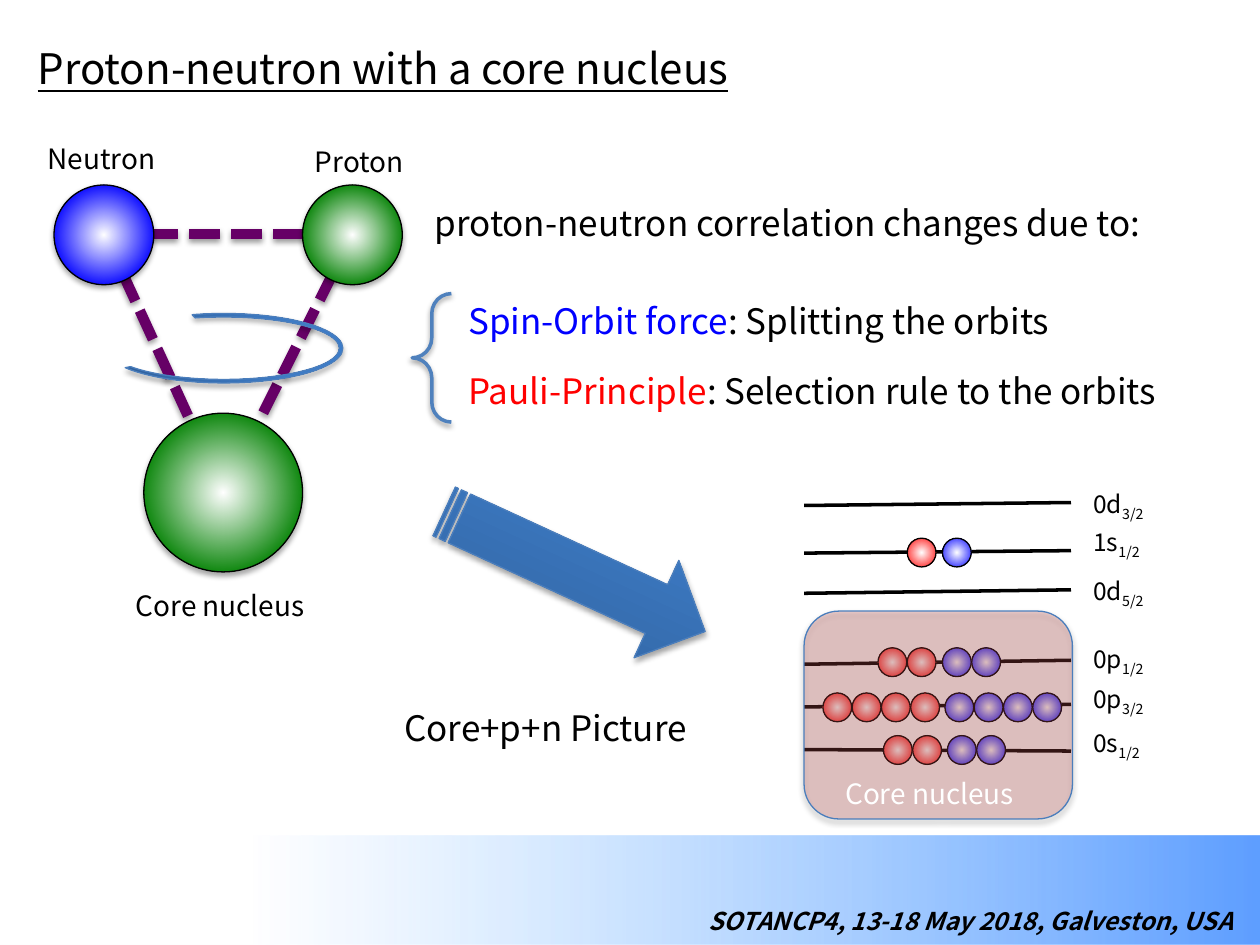
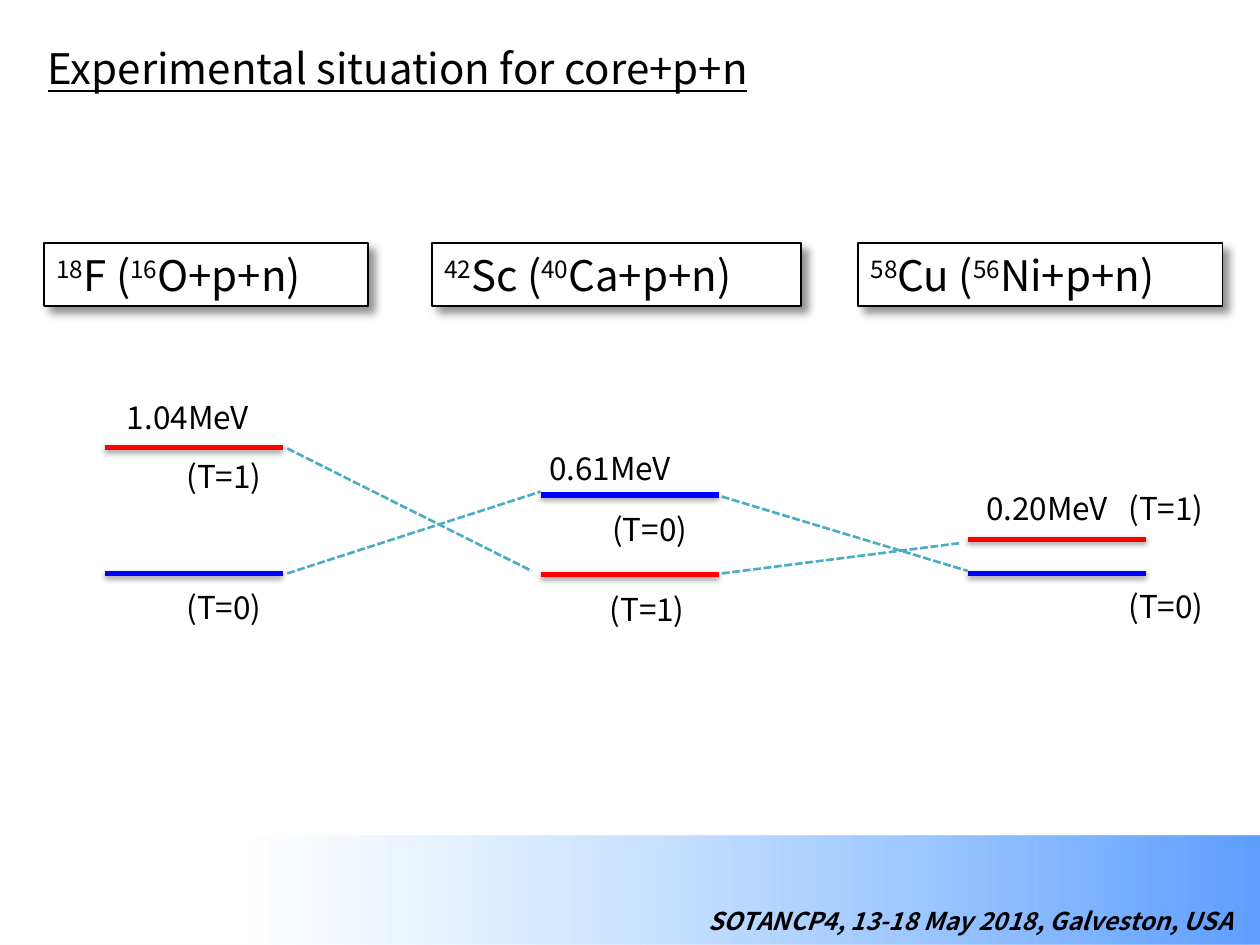
"""Build two slides on proton-neutron pairs around a core nucleus."""
from dataclasses import dataclass

from lxml.etree import SubElement
from pptx import Presentation
from pptx.dml.color import RGBColor
from pptx.enum.dml import MSO_LINE
from pptx.enum.shapes import MSO_CONNECTOR, MSO_SHAPE
from pptx.enum.text import MSO_AUTO_SIZE, PP_ALIGN
from pptx.oxml.ns import qn
from pptx.util import Cm, Pt


@dataclass(frozen=True)
class Theme:
    font: str = "Noto Sans CJK JP"
    black: str = "000000"
    white: str = "FFFFFF"
    red: str = "FF0000"
    blue: str = "0000FF"
    green: str = "008000"
    purple: str = "660066"
    teal: str = "4BACC6"
    edge: str = "4B7EBC"
    brace: str = "4F81BD"
    core: str = "C0504D"
    steel: tuple = ((0, "2F5F99"), (80, "3D7CC7"), (100, "3A7CCB"))
    band: tuple = ((0, "5E9EFF"), (80, "85C2FF", 0), (100, "85C2FF", 0))
    title: int = 24
    body: int = 20
    energy: int = 18
    label: int = 16
    small: int = 14


THEME = Theme()
LINE_SHADOW = dict(opacity=38, blur=3.15, distance=1.57, angle=90)
SHAPE_SHADOW = dict(opacity=35, blur=3.15, distance=1.81, angle=90)
CARD_SHADOW = dict(opacity=43, blur=5, distance=5, angle=45)

FOOTER = "SOTANCP4, 13-18 May 2018, Galveston, USA"

BONDS = [(2.11, 4.72, 7.29, 4.72), (2.11, 4.72, 4.5, 9.93), (7.11, 4.72, 4.5, 9.93)]
NUCLEI = [
    (1.09, 3.73, 2.01, THEME.blue),
    (6.1, 3.73, 2.01, THEME.green),
    (2.9, 8.33, 3.2, THEME.green),
]
NUCLEUS_LABELS = [
    ("Neutron", 0.71, 2.72, 2.77, THEME.black),
    ("Proton", 6.1, 2.79, 2.34, THEME.black),
    ("Core nucleus", 2.49, 11.73, 4.09, THEME.black),
    ("Core nucleus", 16.79, 15.52, 4.09, THEME.white),
]
STATEMENTS = [
    ("proton-neutron correlation changes due to:", 8.51, 3.94, 15.62),
    ([("Spin-Orbit force", {"color": THEME.blue}), (": Splitting the orbits", {})],
     9.19, 5.92, 12.98),
    ([("Pauli-Principle", {"color": THEME.red}), (": Selection rule to the orbits", {})],
     9.19, 7.32, 15.11),
    ("Core+p+n Picture", 7.9, 14.12, 6.76),
]

ORBIT_LEFT, ORBIT_RIGHT, ORBIT_LABEL_LEFT = 16.21, 21.59, 21.79
BALL_SIZE, BALL_PITCH = 0.58, 0.59
ORBITS = [
    dict(name="0s", spin="1/2", ends=(15.11, 15.14), label=14.55,
         balls=14.83, count=2, starts=(17.81, 19.1)),
    dict(name="0p", spin="3/2", ends=(14.25, 14.2), label=13.67,
         balls=13.97, count=4, starts=(16.59, 19.05)),
    dict(name="0p", spin="1/2", ends=(13.39, 13.31), label=12.85,
         balls=13.06, count=2, starts=(17.7, 19)),
    dict(name="0d", spin="5/2", ends=(11.96, 11.89), label=11.48, count=0),
    dict(name="1s", spin="1/2", ends=(11.15, 11.1), label=10.49,
         balls=10.85, count=1, starts=(18.29, 19)),
    dict(name="0d", spin="3/2", ends=(10.19, 10.13), label=9.73, count=0),
]

ISOTOPES = [
    ("18", "F (", "16", "O+p+n)", 0.89, 6.53),
    ("42", "Sc (", "40", "Ca+p+n)", 8.71, 7.44),
    ("58", "Cu (", "56", "Ni+p+n)", 17.3, 7.34),
]
LEVEL_LENGTH = 3.59
LEVEL_COLORS = {"(T=0)": THEME.blue, "(T=1)": THEME.red}
LEVELS = [
    ("(T=0)", 2.11, 11.56, 3.51, 11.73),
    ("(T=1)", 2.11, 9.02, 3.51, 9.09),
    ("(T=1)", 10.9, 11.58, 12.04, 11.76),
    ("(T=0)", 10.9, 9.98, 12.09, 10.16),
    ("(T=0)", 19.51, 11.56, 22.5, 11.71),
    ("(T=1)", 19.51, 10.87, 22.5, 9.73),
]
ENERGIES = [("1.04MeV", 2.31, 7.9), ("0.61MeV", 10.82, 8.92), ("0.20MeV", 19.63, 9.73)]
CORRELATIONS = [
    (5.79, 11.56, 10.9, 9.91), (5.79, 9.04, 10.72, 11.51),
    (14.55, 11.56, 19.35, 10.95), (14.55, 10.01, 19.51, 11.51),
]


def rgb(color):
    return RGBColor.from_string(color)


def set_shadow(item, shadow=None):
    effects = SubElement(item._element.spPr, qn("a:effectLst"))
    if shadow:
        outer = SubElement(
            effects, qn("a:outerShdw"), blurRad=str(Pt(shadow["blur"])),
            dist=str(Pt(shadow["distance"])), dir=str(shadow["angle"] * 60000),
            rotWithShape="0")
        color = SubElement(outer, qn("a:srgbClr"), val=THEME.black)
        SubElement(color, qn("a:alpha"), val=str(shadow["opacity"] * 1000))


def set_gradient(shape, stops, angle=None):
    properties = shape._element.spPr
    gradient = SubElement(properties, qn("a:gradFill"), rotWithShape="1")
    stop_list = SubElement(gradient, qn("a:gsLst"))
    for position, color, *opacity in stops:
        stop = SubElement(stop_list, qn("a:gs"), pos=str(position * 1000))
        paint = SubElement(stop, qn("a:srgbClr"), val=color)
        for value in opacity:
            SubElement(paint, qn("a:alpha"), val=str(value * 1000))
    if angle is None:
        radial = SubElement(gradient, qn("a:path"), path="circle")
        SubElement(radial, qn("a:fillToRect"), l="50000", t="50000", r="50000", b="50000")
    else:
        SubElement(gradient, qn("a:lin"), ang=str(angle * 60000), scaled="0")
    properties.find(qn("a:prstGeom")).addnext(gradient)


def add_figure(slide, kind, left, top, width, height, *, fill=None, stops=None, angle=None,
               opacity=None, edge=None, weight=0.75, shadow=None, rotation=0, adjust=()):
    shape = slide.shapes.add_shape(kind, Cm(left), Cm(top), Cm(width), Cm(height))
    shape.rotation = rotation
    for index, value in enumerate(adjust):
        shape.adjustments[index] = value
    if stops:
        set_gradient(shape, stops, angle)
    elif fill:
        shape.fill.solid()
        shape.fill.fore_color.rgb = rgb(fill)
        if opacity:
            paint = shape._element.spPr.find(qn("a:solidFill")).find(qn("a:srgbClr"))
            SubElement(paint, qn("a:alpha"), val=str(opacity * 1000))
    else:
        shape.fill.background()
    if edge:
        shape.line.color.rgb = rgb(edge)
        shape.line.width = Pt(weight)
    else:
        shape.line.fill.background()
    set_shadow(shape, shadow)
    return shape


def add_sphere(slide, left, top, size, color, reach=100, shadow=None):
    add_figure(slide, MSO_SHAPE.OVAL, left, top, size, size, edge=THEME.black,
               stops=((0, THEME.white), (reach, color)), shadow=shadow)


def add_line(slide, ends, color, weight, dashed=False, shadow=None):
    line = slide.shapes.add_connector(MSO_CONNECTOR.STRAIGHT, *map(Cm, ends))
    line.line.color.rgb = rgb(color)
    line.line.width = Pt(weight)
    if dashed:
        line.line.dash_style = MSO_LINE.SQUARE_DOT
    set_shadow(line, shadow)


def add_text(slide, text, left, top, width, height, *, size, color=THEME.black, bold=False,
             italic=False, underline=False, wrap=False, align=PP_ALIGN.LEFT):
    box = slide.shapes.add_textbox(Cm(left), Cm(top), Cm(width), Cm(height))
    box.text_frame.word_wrap = wrap
    box.text_frame.auto_size = MSO_AUTO_SIZE.SHAPE_TO_FIT_TEXT
    para = box.text_frame.paragraphs[0]
    para.alignment = align
    for words, style in [(text, {})] if isinstance(text, str) else text:
        span = para.add_run()
        span.text = words
        font = span.font
        font.name, font.size = THEME.font, Pt(size)
        font.bold, font.italic, font.underline = bold, italic, underline
        font.color.rgb = rgb(style.get("color", color))
        if "baseline" in style:
            span._r.get_or_add_rPr().set("baseline", str(style["baseline"] * 1000))
    return box


def start_slide(deck, title, left, width):
    slide = deck.slides.add_slide(deck.slide_layouts[6])
    add_figure(slide, MSO_SHAPE.RECTANGLE, 0, 16.84, 25.4, 2.21, stops=THEME.band, angle=180)
    add_text(slide, title, left, 0.74, width, 1.27, size=THEME.title, underline=True)
    add_text(slide, FOOTER, 10.69, 18.14, 14.43, 0.86, size=THEME.small, bold=True,
             italic=True, wrap=True, align=PP_ALIGN.RIGHT)
    return slide


def add_orbit(slide, orbit):
    start, end = orbit["ends"]
    add_line(slide, (ORBIT_LEFT, start, ORBIT_RIGHT, end), THEME.black, 2)
    for first, color in zip(orbit.get("starts", ()), (THEME.red, THEME.blue)):
        for index in range(orbit["count"]):
            add_sphere(slide, first + index * BALL_PITCH, orbit["balls"], BALL_SIZE, color)
    add_text(slide, [(orbit["name"], {}), (orbit["spin"], {"baseline": -25})],
             ORBIT_LABEL_LEFT, orbit["label"], 1.68, 0.86, size=THEME.small)


def build_core_slide(deck):
    slide = start_slide(deck, "Proton-neutron with a core nucleus", 0.51, 15.27)
    for ends in BONDS:
        add_line(slide, ends, THEME.purple, 6, dashed=True, shadow=LINE_SHADOW)
    for orbit in ORBITS:
        add_orbit(slide, orbit)
    steel = dict(stops=THEME.steel, angle=270, edge=THEME.edge, shadow=SHAPE_SHADOW)
    add_figure(slide, MSO_SHAPE.STRIPED_RIGHT_ARROW, 8.69, 10.44, 5.79, 2.16,
               rotation=24.7, **steel)
    add_figure(slide, MSO_SHAPE.ROUNDED_RECTANGLE, 16.21, 12.32, 5.41, 4.19,
               fill=THEME.core, opacity=27, edge=THEME.edge, shadow=SHAPE_SHADOW)
    add_figure(slide, MSO_SHAPE.LEFT_BRACE, 8.31, 5.92, 0.79, 2.59, edge=THEME.brace,
               weight=2, shadow=LINE_SHADOW, adjust=(0.51, 0.5))
    add_figure(slide, MSO_SHAPE.BLOCK_ARC, 3.81, 4.62, 1.4, 4.8, rotation=90,
               adjust=(81.97, 47.28, 0.05), **steel)
    for left, top, size, color in NUCLEI:
        add_sphere(slide, left, top, size, color, reach=76, shadow=SHAPE_SHADOW)
    for text, left, top, width, color in NUCLEUS_LABELS:
        add_text(slide, text, left, top, width, 0.94, size=THEME.label, color=color)
    for text, left, top, width in STATEMENTS:
        add_text(slide, text, left, top, width, 1.12, size=THEME.body)


def build_experiment_slide(deck):
    slide = start_slide(deck, "Experimental situation for core+p+n", 0.71, 15.77)
    raised = {"baseline": 30}
    for mass, element, core_mass, rest, left, width in ISOTOPES:
        spans = [(mass, raised), (element, {}), (core_mass, raised), (rest, {})]
        card = add_text(slide, spans, left, 4.9, width, 1.27, size=THEME.title)
        card.fill.solid()
        card.fill.fore_color.rgb = rgb(THEME.white)
        card.line.color.rgb = rgb(THEME.black)
        card.line.width = Pt(0.75)
        set_shadow(card, CARD_SHADOW)
    for isospin, left, height, label_left, label_top in LEVELS:
        add_line(slide, (left, height, left + LEVEL_LENGTH, height), LEVEL_COLORS[isospin], 3,
                 shadow=LINE_SHADOW)
        add_text(slide, isospin, label_left, label_top, 2.39, 1.02, size=THEME.energy)
    for energy, left, top in ENERGIES:
        add_text(slide, energy, left, top, 3.28, 1.02, size=THEME.energy)
    for ends in CORRELATIONS:
        add_line(slide, ends, THEME.teal, 1.5, dashed=True)


def main():
    deck = Presentation()
    deck.slide_width, deck.slide_height = Cm(25.4), Cm(19.05)
    build_core_slide(deck)
    build_experiment_slide(deck)
    deck.save("out.pptx")


if __name__ == "__main__":
    main()
